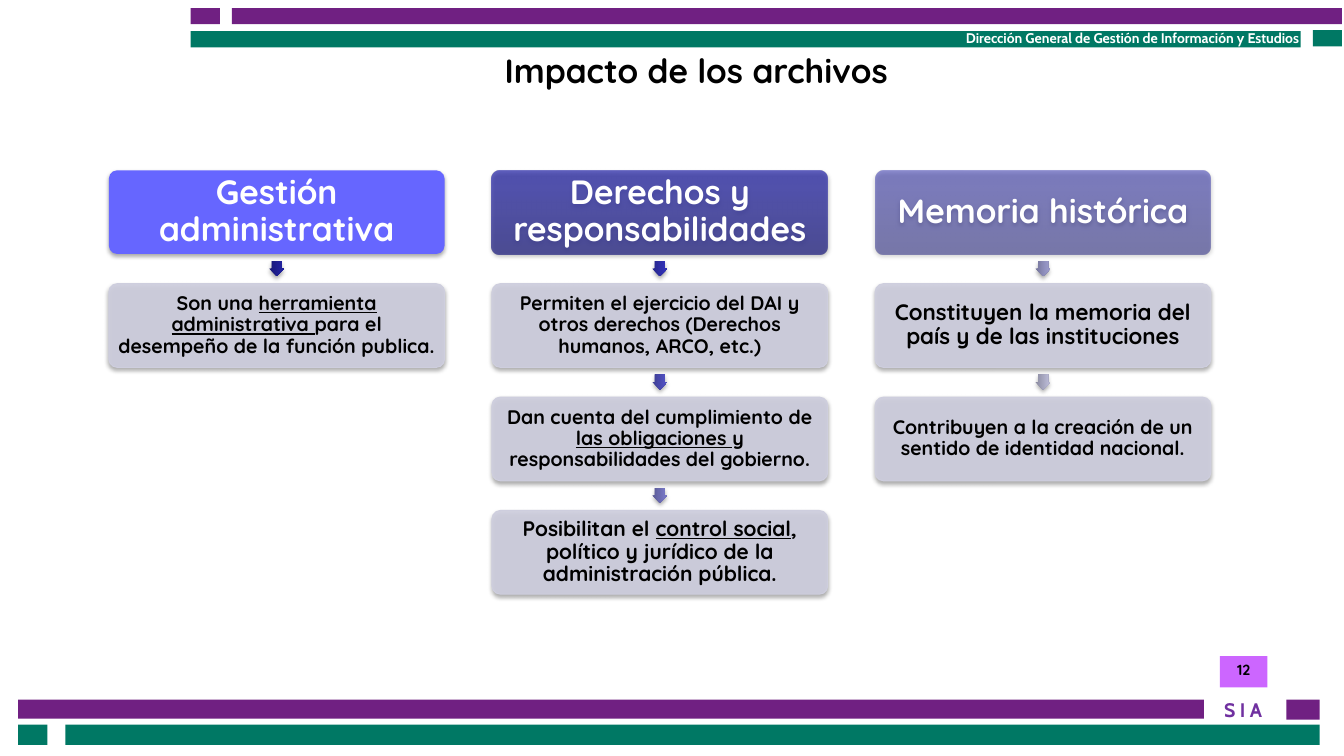
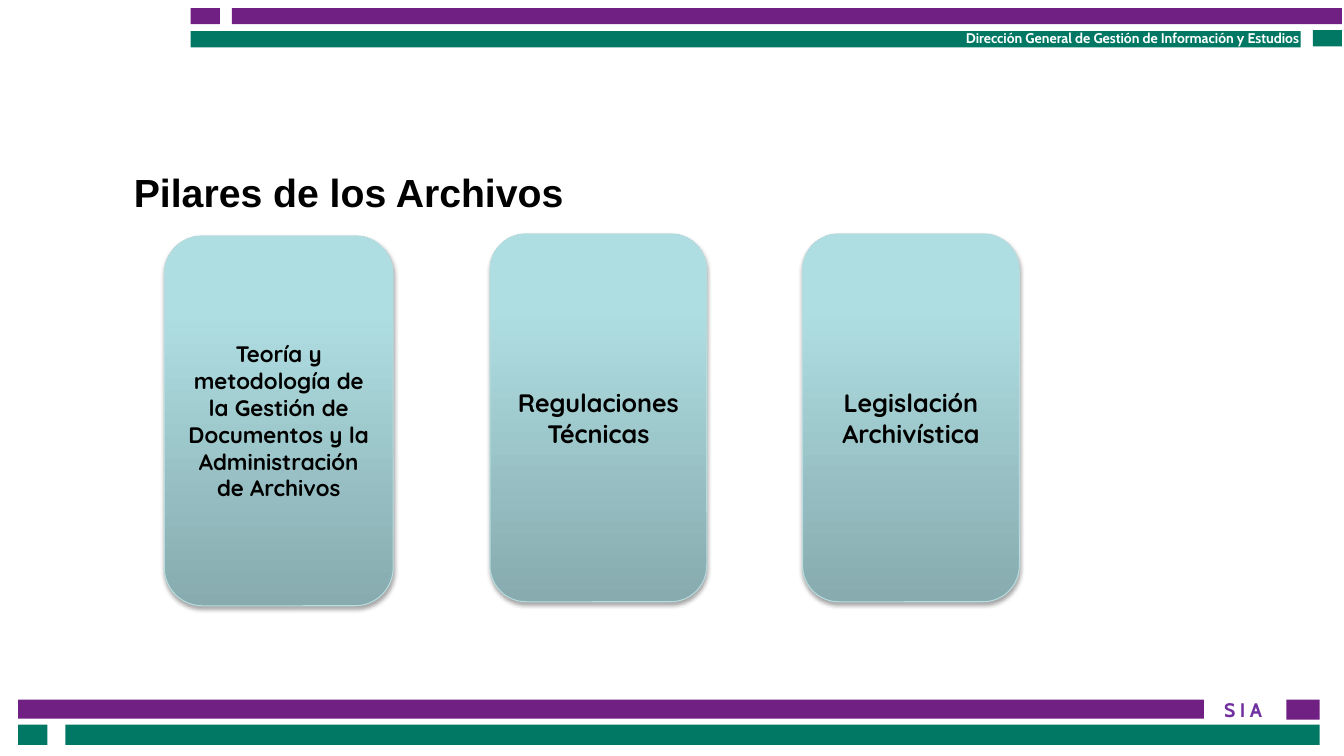
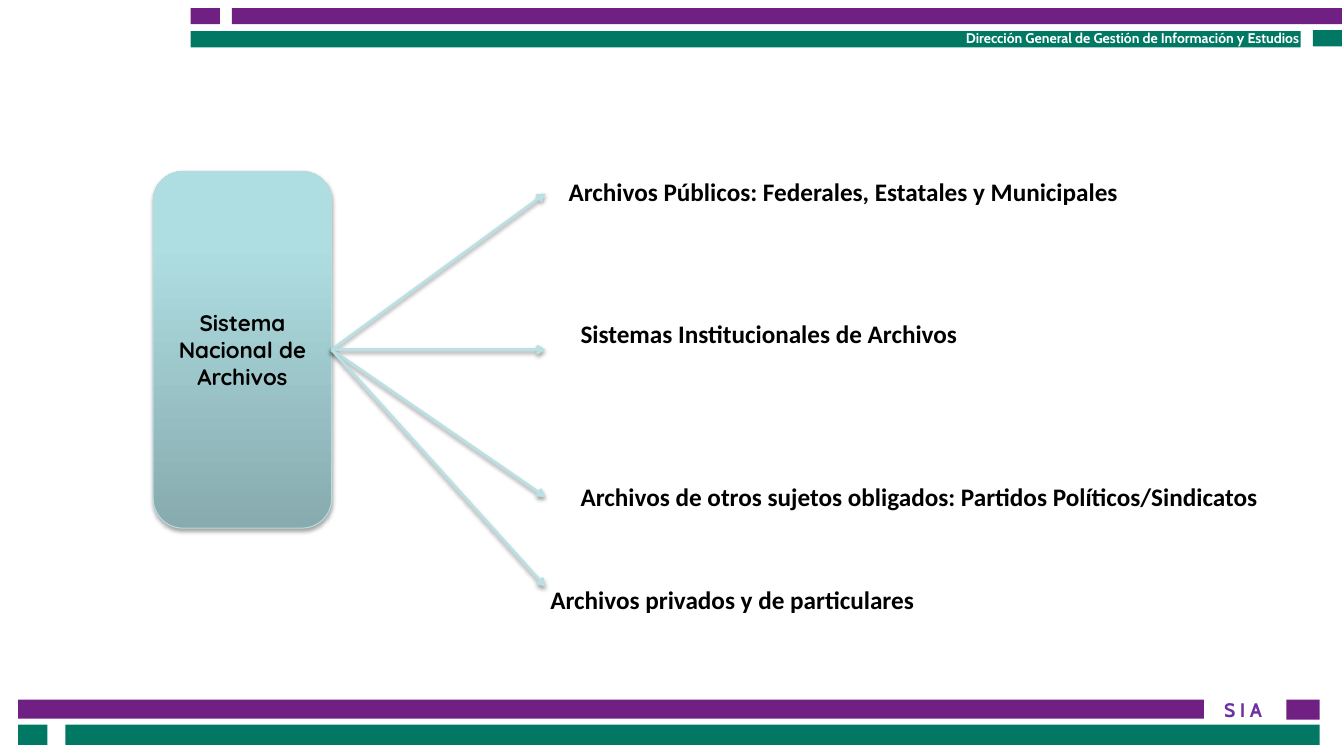
from lxml.etree import SubElement
from pptx import Presentation
from pptx.dml.color import RGBColor
from pptx.enum.shapes import MSO_CONNECTOR, MSO_SHAPE
from pptx.enum.text import MSO_ANCHOR, PP_ALIGN
from pptx.oxml.ns import qn
from pptx.util import Inches, Pt

PURPLE, GREEN = "702082", "007864"
BLACK, WHITE = "000000", "FFFFFF"
CARD = "CECEDE"
AQUA = ("87ABAE", "AFDEE2", "AFE0E4")
INDIGO = ("1B1B7E", "2323A3", "2020A6")

BANDS = [
    (12.76, 6.94, 0.33, 0.2, PURPLE),
    (0.18, 6.94, 11.76, 0.19, PURPLE),
    (0.18, 7.19, 0.29, 0.2, GREEN),
    (0.65, 7.19, 12.44, 0.2, GREEN),
    (1.89, 0.08, 0.29, 0.16, PURPLE),
    (2.3, 0.08, 11.01, 0.16, PURPLE),
    (13.02, 0.3, 0.29, 0.16, GREEN),
    (1.89, 0.31, 11.01, 0.16, GREEN),
]

IMPACTS = [
    ("Gestión administrativa", "6666FF", 100, [
        ("Son una _herramienta administrativa _para el desempeño de la función publica.",
         14, ("191978", "21219C", "1F1F9F")),
    ]),
    ("Derechos y responsabilidades", INDIGO, 70, [
        ("Permiten el ejercicio del DAI y otros derechos (Derechos humanos, ARCO, etc.)",
         14, ("26268B", "3131B4", "2F2FB8")),
        ("Dan cuenta del cumplimiento de _las obligaciones _y responsabilidades del gobierno.",
         14, ("3D3D93", "4F4FBE", "4E4EC1")),
        ("Posibilitan el _control social_, político y jurídico de la administración pública.",
         15, ("5A5A95", "7575C1", "7474C4")),
    ]),
    ("Memoria histórica", INDIGO, 50, [
        ("Constituyen la memoria del país y de las instituciones",
         16, ("74749A", "9797C7", "9797C9")),
        ("Contribuyen a la creación de un sentido de identidad nacional.",
         14, ("8C8CA1", "B6B6D1", "B6B6D2")),
    ]),
]

PILLARS = [
    (1.63, 2.34, 2.27, 3.67,
     "Teoría y metodología de la Gestión de Documentos y la Administración de Archivos", 16),
    (4.86, 2.32, 2.15, 3.65, "Regulaciones\nTécnicas", 18),
    (7.96, 2.32, 2.15, 3.65, "Legislación Archivística", 18),
]

BRANCHES = [
    (1.92, 5.54, 1.7, 5.69, "Archivos Públicos: Federales, Estatales y Municipales"),
    (3.47, 5.66, 3.11, 3.97, "Sistemas Institucionales de Archivos"),
    (4.93, 5.66, 4.73, 6.97,
     "Archivos de otros sujetos obligados: Partidos Políticos/Sindicatos"),
    (5.82, 5.36, 5.75, 3.84, "Archivos privados y de particulares"),
]


def rgb(code):
    return RGBColor.from_string(code)


def set_alpha(color_node, percent):
    if percent < 100:
        SubElement(color_node, qn("a:alpha"), val=str(percent * 1000))


def paint(shape, color, opacity=100):
    properties = shape.element.spPr
    if isinstance(color, str):
        shape.fill.solid()
        shape.fill.fore_color.rgb = rgb(color)
        set_alpha(properties.find(qn("a:solidFill"))[0], opacity)
        return
    shape.fill.gradient()
    shape.fill.gradient_angle = 90
    stops = properties.find(qn("a:gradFill")).find(qn("a:gsLst"))
    for stop in list(stops):
        stops.remove(stop)
    for position, code in zip((0, 80, 100), color):
        stop = SubElement(stops, qn("a:gs"), pos=str(position * 1000))
        set_alpha(SubElement(stop, qn("a:srgbClr"), val=code), opacity)


def cast_shadow(properties, distance=1.8, opacity=35):
    effects = properties.find(qn("a:effectLst"))
    if effects is None:
        effects = SubElement(properties, qn("a:effectLst"))
    shadow = SubElement(effects, qn("a:outerShdw"), blurRad=str(Pt(3.1)),
                        dist=str(Pt(distance)), dir="5400000", rotWithShape="0")
    set_alpha(SubElement(shadow, qn("a:srgbClr"), val=BLACK), opacity)


def write(frame, text, size, font="Quicksand", color=BLACK, align=PP_ALIGN.CENTER,
          anchor=MSO_ANCHOR.TOP, wrap=True, margin=None, spacing=None):
    frame.word_wrap = wrap
    frame.vertical_anchor = anchor
    if margin is not None:
        frame.margin_left = frame.margin_right = Inches(margin)
        frame.margin_top = frame.margin_bottom = Inches(margin)
    for index, line in enumerate(text.split("\n")):
        paragraph = frame.paragraphs[0] if index == 0 else frame.add_paragraph()
        paragraph.alignment = align
        paragraph.line_spacing = spacing
        paragraph.font.name = font
        paragraph.font.size = Pt(size)
        paragraph.font.bold = True
        paragraph.font.color.rgb = rgb(color)
        for part, words in enumerate(line.split("_")):
            run = paragraph.add_run()
            run.text = words
            if part % 2:
                run.font.underline = True


def add_label(slide, left, top, width, height, text, size, **style):
    label = slide.shapes.add_textbox(Inches(left), Inches(top), Inches(width), Inches(height))
    write(label.text_frame, text, size, **style)


def add_block(slide, kind, left, top, width, height, color, opacity=100, outline=None,
              shaded=True):
    block = slide.shapes.add_shape(kind, Inches(left), Inches(top), Inches(width), Inches(height))
    block.shadow.inherit = False
    paint(block, color, opacity)
    if outline:
        block.line.color.rgb = rgb(outline)
        block.line.width = Pt(0.75)
    else:
        block.line.fill.background()
    if shaded:
        cast_shadow(block.element.spPr)
    return block


def add_card(slide, left, top, text, size, color, opacity, text_color=BLACK, outline=None):
    card = add_block(slide, MSO_SHAPE.ROUNDED_RECTANGLE, left, top, 3.33, 0.83, color, opacity,
                     outline)
    card.adjustments[0] = 0.1
    write(card.text_frame, text, size, color=text_color, anchor=MSO_ANCHOR.MIDDLE,
          margin=0.04, spacing=0.9)


def add_step_arrow(slide, left, top, color):
    arrow = add_block(slide, MSO_SHAPE.RIGHT_ARROW, left, top, 0.15, 0.15, color)
    arrow.rotation = 90
    arrow.adjustments[0] = 0.667


def add_pillar(slide, left, top, width, height, text, size):
    pillar = add_block(slide, MSO_SHAPE.ROUNDED_RECTANGLE, left, top, width, height, AQUA,
                       outline="B6DCDF")
    write(pillar.text_frame, text, size, anchor=MSO_ANCHOR.MIDDLE)


def add_branch_arrow(slide, start, end):
    branch = slide.shapes.add_connector(MSO_CONNECTOR.STRAIGHT,
                                        *(Inches(value) for value in start + end))
    branch.line.color.rgb = rgb("BBE0E3")
    branch.line.width = Pt(2)
    properties = branch.element.spPr
    SubElement(properties.find(qn("a:ln")), qn("a:tailEnd"), type="arrow")
    cast_shadow(properties, 1.6, 38)


def start_slide(deck):
    slide = deck.slides.add_slide(deck.slide_layouts[6])
    for *place, color in BANDS:
        add_block(slide, MSO_SHAPE.RECTANGLE, *place, color, shaded=False)
    add_label(slide, 8.3, 0.24, 4.68, 0.27,
              "Dirección General de Gestión de Información y Estudios", 10,
              font="Cabin", color=WHITE, align=PP_ALIGN.RIGHT)
    add_label(slide, 11.99, 6.87, 0.68, 0.34, "S I A", 14, font="Cabin", color="7030A0",
              wrap=False)
    return slide


def build_impact(deck):
    slide = start_slide(deck)
    add_label(slide, 2.41, 0.45, 8.99, 0.62, "Impacto de los archivos", 24)
    page = add_block(slide, MSO_SHAPE.RECTANGLE, 12.1, 6.51, 0.47, 0.31, "CC66FF", shaded=False)
    write(page.text_frame, "12", 10.5, margin=0.05)
    for column, (heading, color, opacity, effects) in enumerate(IMPACTS):
        left, top = 1.08 + 3.8 * column, 1.69
        add_card(slide, left, top, heading, 24, color, opacity, WHITE)
        for text, size, arrow_color in effects:
            add_step_arrow(slide, left + 1.59, top + 0.9, arrow_color)
            top += 1.125
            add_card(slide, left, top, text, size, CARD, 90, outline=CARD)


def build_pillars(deck):
    slide = start_slide(deck)
    add_label(slide, 1.23, 1.62, 4.57, 0.57, "Pilares de los Archivos", 28, font="Arial",
              align=PP_ALIGN.LEFT)
    for pillar in PILLARS:
        add_pillar(slide, *pillar)


def build_system(deck):
    slide = start_slide(deck)
    add_pillar(slide, 1.52, 1.7, 1.77, 3.54, "Sistema Nacional de Archivos", 16)
    for tip, left, top, width, text in BRANCHES:
        add_branch_arrow(slide, (3.29, 3.47), (5.41, tip))
        add_label(slide, left, top, width, 0.4, text, 18, font="Calibri",
                  align=PP_ALIGN.LEFT, wrap=False)


def main():
    deck = Presentation()
    deck.slide_width, deck.slide_height = Inches(13.33), Inches(7.5)
    build_impact(deck)
    build_pillars(deck)
    build_system(deck)
    deck.save("out.pptx")


if __name__ == "__main__":
    main()
